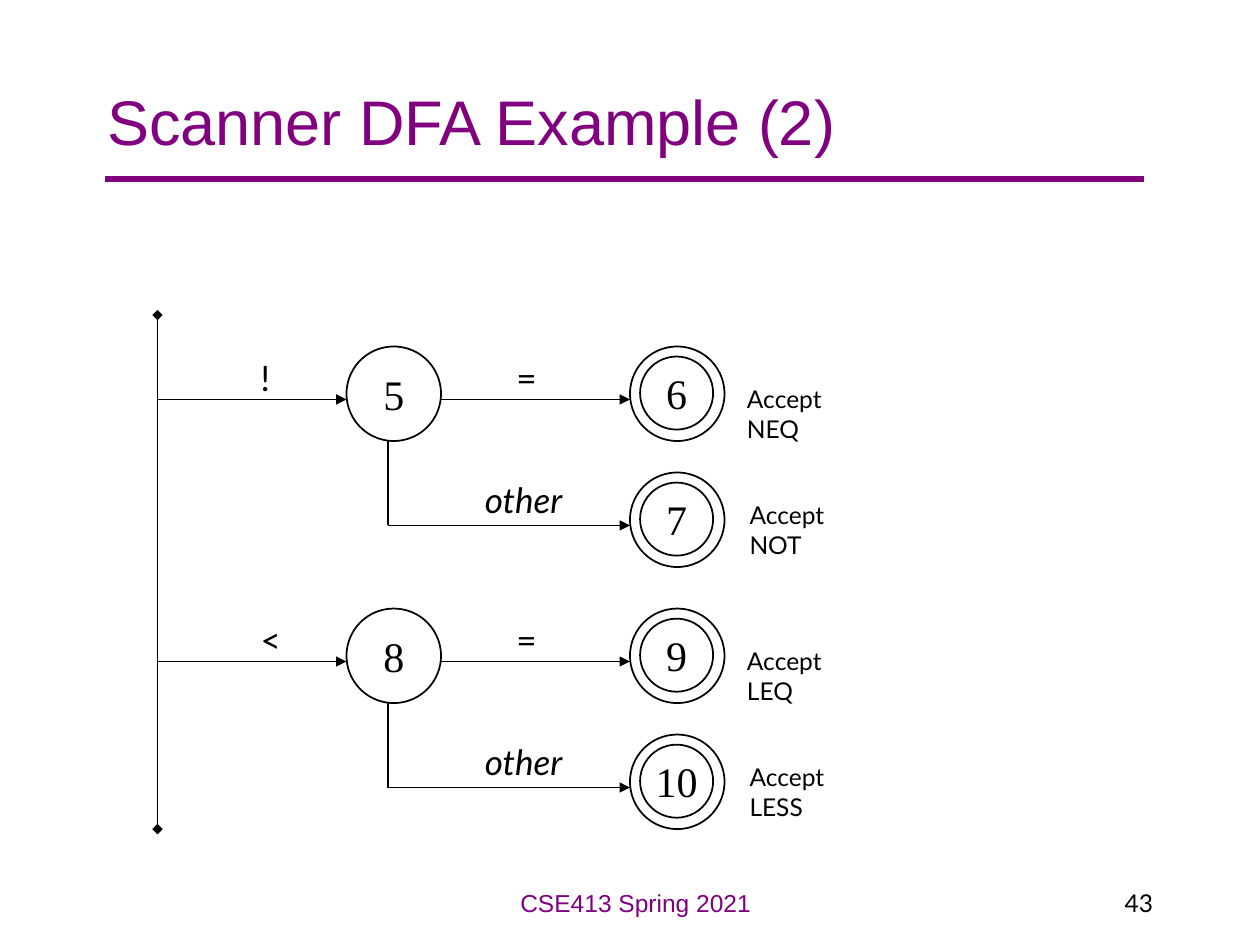
from dataclasses import dataclass

from lxml import etree
from pptx import Presentation
from pptx.dml.color import RGBColor
from pptx.enum.shapes import MSO_CONNECTOR, MSO_SHAPE
from pptx.enum.text import MSO_ANCHOR, MSO_AUTO_SIZE, PP_ALIGN
from pptx.oxml.ns import qn
from pptx.util import Inches, Pt

STRAIGHT = MSO_CONNECTOR.STRAIGHT
ELLIPSE = MSO_SHAPE.OVAL
LEFT, CENTER, RIGHT = PP_ALIGN.LEFT, PP_ALIGN.CENTER, PP_ALIGN.RIGHT
TOP, MIDDLE = MSO_ANCHOR.TOP, MSO_ANCHOR.MIDDLE
FIXED_SIZE = MSO_AUTO_SIZE.NONE
TITLE_ONLY = 5


@dataclass(frozen=True)
class Theme:
    accent: RGBColor = RGBColor(0x80, 0x00, 0x80)
    ink: RGBColor = RGBColor(0x00, 0x00, 0x00)
    heading_font: str = "Arial"
    label_font: str = "Lato"
    state_font: str = "Times New Roman"
    title_size: int = 36
    state_size: int = 24
    symbol_size: int = 20
    small_size: int = 14
    rule_width: float = 3
    outline_width: float = 1
    edge_width: float = 0.75


class SlideBuilder:
    def __init__(self, page, theme):
        self.page = page
        self.theme = theme

    def fill_text(self, frame, text, size, font, color, align=LEFT, anchor=TOP,
                  italic=False, wrap=True):
        frame.text = text
        frame.word_wrap = wrap
        frame.auto_size = FIXED_SIZE
        frame.vertical_anchor = anchor
        para = frame.paragraphs[0]
        para.alignment = align
        para.font.size = Pt(size)
        para.font.name = font
        para.font.italic = italic
        para.font.color.rgb = color

    def title(self, text, left, top, width, height):
        box = self.page.shapes.title
        box.left, box.top = Inches(left), Inches(top)
        box.width, box.height = Inches(width), Inches(height)
        self.fill_text(box.text_frame, text, self.theme.title_size,
                       self.theme.heading_font, self.theme.accent,
                       anchor=MIDDLE)

    def text(self, text, left, top, width, height, size, font=None, color=None,
             **style):
        box = self.page.shapes.add_textbox(
            Inches(left), Inches(top), Inches(width), Inches(height))
        self.fill_text(box.text_frame, text, size,
                       font or self.theme.label_font,
                       color or self.theme.ink, **style)
        return box

    def symbol(self, text, left, top, width, italic=False):
        self.text(text, left, top, width, 0.44, self.theme.symbol_size,
                  italic=italic, wrap=False)

    def accept_label(self, token, left, top):
        box = self.text(f"Accept {token}", left, top, 1.21, 0.33,
                        self.theme.small_size)
        # The wider right margin puts the token on its own line.
        box.text_frame.margin_right = Inches(0.25)

    def line(self, x1, y1, x2, y2, width=None, color=None, head=None, tail=None):
        line = self.page.shapes.add_connector(
            STRAIGHT, Inches(x1), Inches(y1), Inches(x2), Inches(y2))
        line.line.width = Pt(width or self.theme.edge_width)
        line.line.color.rgb = color or self.theme.ink
        properties = line._element.spPr
        outline = properties.find(qn("a:ln"))
        for tag, kind in (("a:headEnd", head), ("a:tailEnd", tail)):
            if kind:
                etree.SubElement(outline, qn(tag), type=kind)
        etree.SubElement(properties, qn("a:effectLst"))

    def circle(self, shapes, left, top, diameter, text=""):
        circle = shapes.add_shape(ELLIPSE, Inches(left), Inches(top),
                                  Inches(diameter), Inches(diameter))
        circle.shadow.inherit = False
        circle.fill.background()
        circle.line.color.rgb = self.theme.ink
        circle.line.width = Pt(self.theme.outline_width)
        if text:
            self.fill_text(circle.text_frame, text, self.theme.state_size,
                           self.theme.state_font, self.theme.ink, align=CENTER,
                           anchor=MIDDLE, wrap=False)

    def state(self, name, left, top):
        self.circle(self.page.shapes, left, top, 0.75, name)

    def accepting_state(self, name, left, top):
        group = self.page.shapes.add_group_shape()
        self.circle(group.shapes, left, top, 0.75)
        self.circle(group.shapes, left + 0.08, top + 0.08, 0.58, name)

    def branch(self, top, symbol, symbol_width, state, matched, other):
        """Draw one start symbol with its "=" and "other" outcomes."""
        edge, other_edge = top + 0.42, top + 1.42
        self.line(1.25, edge, 2.75, edge, tail="triangle")
        self.line(3.5, edge, 5, edge, tail="triangle")
        self.line(3.08, top + 0.75, 3.08, other_edge)
        self.line(3.08, other_edge, 5, other_edge, tail="triangle")
        self.symbol(symbol, 1.97, top + 0.03, symbol_width)
        self.symbol("=", 4, top + 0.03, 0.41)
        self.symbol("other", 3.75, top + 1, 0.94, italic=True)
        self.state(state, 2.75, top)
        outcomes = ((matched, 0, 5.83, 0.25), (other, 1, 5.85, 1.17))
        for (name, token), offset, label_left, label_offset in outcomes:
            self.accepting_state(name, 5, top + offset)
            self.accept_label(token, label_left, top + label_offset)


def main():
    deck = Presentation()
    deck.slide_width, deck.slide_height = Inches(10), Inches(7.5)
    theme = Theme()
    page = deck.slides.add_slide(deck.slide_layouts[TITLE_ONLY])
    slide = SlideBuilder(page, theme)

    slide.line(0.83, 1.42, 9.08, 1.42, theme.rule_width, theme.accent)
    slide.title("Scanner DFA Example (2)", 0.75, 0.33, 8.5, 1.25)
    slide.line(1.25, 2.5, 1.25, 6.58, head="diamond", tail="diamond")
    slide.branch(2.75, "!", 0.3, "5", ("6", "NEQ"), ("7", "NOT"))
    slide.branch(4.83, "<", 0.41, "8", ("9", "LEQ"), ("10", "LESS"))
    slide.text("CSE413 Spring 2021", 3.17, 7, 3.75, 0.5, theme.small_size,
               theme.heading_font, theme.accent, align=CENTER)
    slide.text("43", 7.17, 7, 2.08, 0.5, theme.small_size, align=RIGHT)

    deck.save("out.pptx")


if __name__ == "__main__":
    main()
